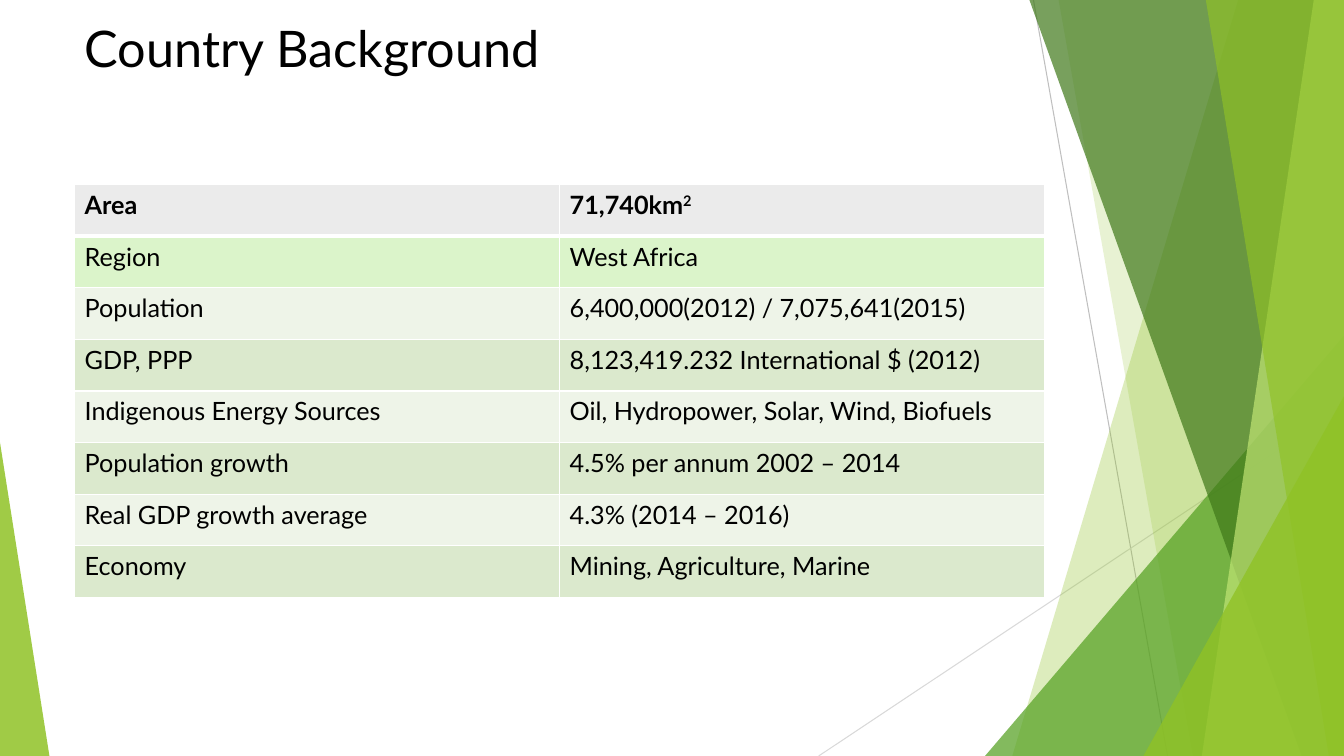
from dataclasses import dataclass

from lxml import etree
from pptx import Presentation
from pptx.dml.color import RGBColor
from pptx.enum.shapes import MSO_CONNECTOR, MSO_SHAPE
from pptx.enum.text import MSO_ANCHOR, PP_ALIGN
from pptx.oxml.ns import qn
from pptx.util import Inches, Pt

STRAIGHT = MSO_CONNECTOR.STRAIGHT
TRIANGLE = MSO_SHAPE.ISOSCELES_TRIANGLE
TOP, LEFT = MSO_ANCHOR.TOP, PP_ALIGN.LEFT

BLACK = RGBColor(0x00, 0x00, 0x00)
LIME = RGBColor(0x90, 0xC2, 0x26)
GREEN = RGBColor(0x54, 0xA0, 0x21)
DARK = RGBColor(0x3F, 0x78, 0x19)
PALE = RGBColor(0xC0, 0xE4, 0x74)
GREY = RGBColor(0xBF, 0xBF, 0xBF)
SILVER = RGBColor(0xD9, 0xD9, 0xD9)
HEAD = RGBColor(0xEB, 0xEB, 0xEB)
MINT = RGBColor(0xDB, 0xF4, 0xCA)
LIGHT = RGBColor(0xEE, 0xF4, 0xE8)
SAGE = RGBColor(0xDB, 0xE9, 0xCD)

FONT = "Lato"
WIDTH, HEIGHT = 13.33, 7.5


@dataclass
class Ray:
    start: tuple[float, float]
    end: tuple[float, float]
    color: RGBColor


@dataclass
class Band:
    """A panel on the right edge, from x = top down to x = foot."""
    top: float
    foot: float
    color: RGBColor
    alpha: int


@dataclass
class Wedge:
    """A right triangle standing on the bottom edge."""
    left: float
    width: float
    height: float
    apex: float
    color: RGBColor
    alpha: int


RAYS = [
    Ray((10.25, 0), (11.58, HEIGHT), GREY),
    Ray((WIDTH, 4.03), (8.12, HEIGHT), SILVER),
]
PANELS = [
    Band(12.28, 10.04, LIME, 30),
    Band(10.5, 11.83, LIME, 20),
    Wedge(9.77, 3.56, 4.17, 1, GREEN, 72),
    Band(10.21, 12.91, DARK, 70),
    Band(13.03, 11.92, PALE, 70),
    Band(11.96, 13.18, LIME, 65),
    Wedge(11.34, 1.99, 3.57, 1, LIME, 80),
    Wedge(0, 0.49, 3.11, 0, LIME, 85),
]
FACTS = [
    ("Area", "71,740km", HEAD),
    ("Region", "West Africa", MINT),
    ("Population", "6,400,000(2012) / 7,075,641(2015)", LIGHT),
    ("GDP, PPP", "8,123,419.232 International $ (2012)", SAGE),
    ("Indigenous Energy Sources", "Oil, Hydropower, Solar, Wind, Biofuels", LIGHT),
    ("Population growth", "4.5% per annum 2002 – 2014", SAGE),
    ("Real GDP growth average", "4.3% (2014 – 2016)", LIGHT),
    ("Economy", "Mining, Agriculture, Marine", SAGE),
]


def add_ray(slide, ray: Ray) -> None:
    line = slide.shapes.add_connector(
        STRAIGHT, *(Inches(v) for v in ray.start + ray.end))
    line.line.color.rgb = ray.color
    line.line.width = Pt(0.75)
    etree.SubElement(line._element.spPr, qn("a:effectLst"))


def add_panel(slide, panel: Band | Wedge) -> None:
    if isinstance(panel, Band):
        pen = slide.shapes.build_freeform(Inches(panel.top), 0)
        pen.add_line_segments([
            (Inches(WIDTH), 0),
            (Inches(WIDTH), Inches(HEIGHT)),
            (Inches(panel.foot), Inches(HEIGHT)),
        ])
        shape = pen.convert_to_shape()
    else:
        shape = slide.shapes.add_shape(
            TRIANGLE, Inches(panel.left), Inches(HEIGHT - panel.height),
            Inches(panel.width), Inches(panel.height))
        shape.adjustments[0] = panel.apex
    shape.shadow.inherit = False
    shape.line.fill.background()
    shape.fill.solid()
    shape.fill.fore_color.rgb = panel.color
    tint = shape._element.spPr.find(".//" + qn("a:srgbClr"))
    etree.SubElement(tint, qn("a:alpha"), val=str(panel.alpha * 1000))


def add_edges(cell, top: float, foot: float) -> None:
    """Draw white borders; top and foot are widths in points."""
    props = cell._tc.get_or_add_tcPr()
    sides = {"lnL": 1, "lnR": 1, "lnT": top, "lnB": foot}
    for i, (side, width) in enumerate(sides.items()):
        edge = etree.Element(qn("a:" + side), w=str(Pt(width)))
        fill = etree.SubElement(edge, qn("a:solidFill"))
        etree.SubElement(fill, qn("a:srgbClr"), val="FFFFFF")
        props.insert(i, edge)


def set_font(para, size: float, bold: bool = False) -> None:
    font = para.font
    font.name, font.size, font.bold = FONT, Pt(size), bold
    font.color.rgb = BLACK


def add_facts(slide) -> None:
    table = slide.shapes.add_table(
        len(FACTS), 2, Inches(0.74), Inches(1.83),
        Inches(9.62), Inches(4.1)).table
    for r, (name, value, color) in enumerate(FACTS):
        for c, text in enumerate((name, value)):
            cell = table.cell(r, c)
            cell.fill.solid()
            cell.fill.fore_color.rgb = color
            add_edges(cell, 3 if r == 1 else 1, 3 if r == 0 else 1)
            cell.text = text
            set_font(cell.text_frame.paragraphs[0], 18, bold=r == 0)
    power = table.cell(0, 1).text_frame.paragraphs[0].add_run()
    power.text = "2"
    power._r.get_or_add_rPr().set("baseline", "30000")


def add_title(slide) -> None:
    title = slide.shapes.title
    title.left, title.top = Inches(0.74), Inches(0.12)
    title.width, title.height = Inches(9.4), Inches(1.44)
    frame = title.text_frame
    frame.text = "Country Background"
    frame.vertical_anchor = TOP
    para = frame.paragraphs[0]
    para.alignment = LEFT
    set_font(para, 36)


def main() -> None:
    deck = Presentation()
    deck.slide_width, deck.slide_height = Inches(WIDTH), Inches(HEIGHT)
    slide = deck.slides.add_slide(deck.slide_layouts[5])
    for ray in RAYS:
        add_ray(slide, ray)
    for panel in PANELS:
        add_panel(slide, panel)
    add_title(slide)
    add_facts(slide)
    deck.save("out.pptx")


if __name__ == "__main__":
    main()
